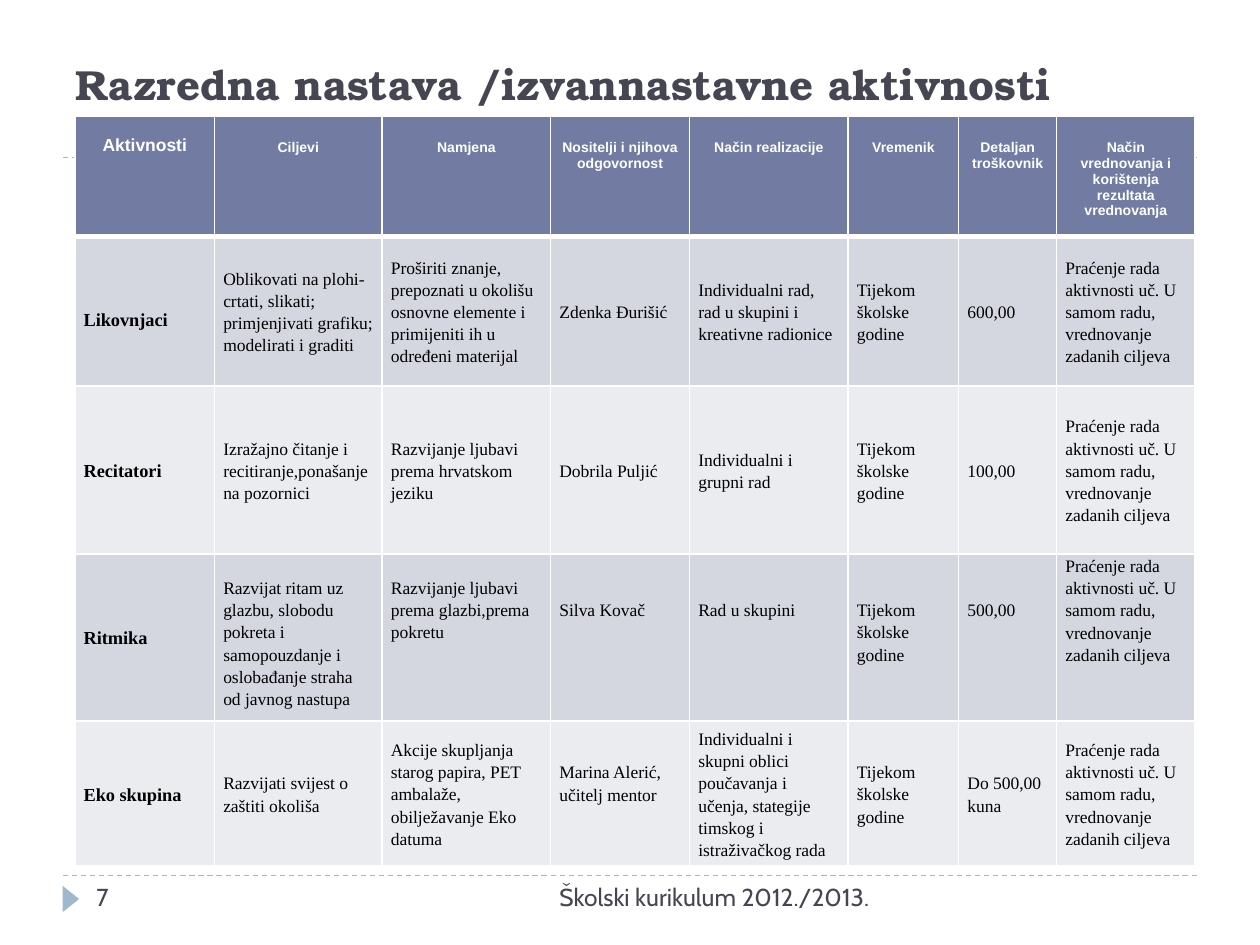
from dataclasses import dataclass

from lxml.etree import SubElement
from pptx import Presentation
from pptx.dml.color import RGBColor
from pptx.enum.dml import MSO_LINE
from pptx.enum.shapes import MSO_CONNECTOR, MSO_SHAPE
from pptx.enum.text import MSO_ANCHOR, MSO_AUTO_SIZE, PP_ALIGN
from pptx.oxml.ns import qn
from pptx.util import Pt


@dataclass(frozen=True)
class TextStyle:
    font: str
    size: float
    color: str
    bold: bool = False
    align: PP_ALIGN = PP_ALIGN.LEFT
    spacing: float = 1.0


@dataclass(frozen=True)
class Theme:
    accent: str = "9FB8CD"
    header_fill: str = "727CA3"
    bands: tuple = ("D5D7E0", "EBECF0")
    border: str = "FFFFFF"
    title: TextStyle = TextStyle("TeX Gyre Bonum", 24, "464653", True)
    page: TextStyle = TextStyle("Cabin", 14, "464653")
    footer: TextStyle = TextStyle("Cabin", 14, "464653", align=PP_ALIGN.RIGHT)
    first_header: TextStyle = TextStyle("Arial", 10, "FFFFFF", True, PP_ALIGN.CENTER)
    header: TextStyle = TextStyle("Arial", 8, "FFFFFF", True, PP_ALIGN.CENTER)
    label: TextStyle = TextStyle("Times New Roman", 10.5, "000000", True, spacing=1.15)
    body: TextStyle = TextStyle("Times New Roman", 10, "000000", spacing=1.15)


@dataclass(frozen=True)
class Entry:
    text: str
    anchor: MSO_ANCHOR = MSO_ANCHOR.MIDDLE
    top: float = 0
    bottom: float = 0


@dataclass(frozen=True)
class Box:
    left: float
    top: float
    width: float
    height: float

    def lengths(self) -> tuple:
        return Pt(self.left), Pt(self.top), Pt(self.width), Pt(self.height)


THEME = Theme()
LINE = 12.6
COLUMN_WIDTHS = (79.8, 95.8, 96.3, 79.4, 90.6, 63.2, 56, 79.1)
ROW_HEIGHTS = (68.8, 85.5, 96.2, 89, 75.5)
EVALUATION = "Praćenje rada aktivnosti uč. U samom radu, vrednovanje zadanih ciljeva"
PERIOD = "Tijekom školske godine"


def from_top(text: str, offset: float = 0) -> Entry:
    return Entry(text, MSO_ANCHOR.TOP, offset)


HEADERS = (
    from_top("Aktivnosti", 11.5),
    *(from_top(text, 13.8) for text in (
        "Ciljevi", "Namjena", "Nositelji i njihova odgovornost", "Način realizacije",
        "Vremenik", "Detaljan troškovnik",
        "Način vrednovanja i korištenja rezultata vrednovanja",
    )),
)
ACTIVITIES = (
    (
        from_top("Likovnjaci", 40.5),
        Entry("Oblikovati na plohi-crtati, slikati; primjenjivati grafiku; modelirati i graditi"),
        Entry("Proširiti znanje, prepoznati u okolišu osnovne elemente i primijeniti ih "
              "u određeni materijal"),
        Entry("Zdenka Đurišić"),
        Entry("Individualni rad, rad u skupini i kreativne radionice"),
        Entry(PERIOD), Entry("600,00"), Entry(EVALUATION),
    ),
    (
        Entry("Recitatori"),
        Entry("Izražajno čitanje i recitiranje,ponašanje na pozornici"),
        Entry("Razvijanje ljubavi prema hrvatskom jeziku"),
        Entry("Dobrila Puljić"),
        Entry("Individualni i grupni rad"),
        Entry(PERIOD), Entry("100,00"), Entry(EVALUATION),
    ),
    (
        from_top("Ritmika", 40.5),
        from_top("Razvijat ritam uz glazbu, slobodu pokreta i samopouzdanje i "
                 "oslobađanje straha od javnog nastupa", LINE),
        from_top("Razvijanje ljubavi prema glazbi,prema pokretu", LINE),
        from_top("Silva Kovač", 2 * LINE),
        from_top("Rad u skupini", 2 * LINE),
        from_top(PERIOD, 2 * LINE), from_top("500,00", 2 * LINE), from_top(EVALUATION),
    ),
    (
        Entry("Eko skupina"),
        Entry("Razvijati svijest o zaštiti okoliša"),
        Entry("Akcije skupljanja starog papira, PET ambalaže, obilježavanje Eko datuma"),
        Entry("Marina Alerić,\nučitelj mentor", bottom=LINE),
        Entry("Individualni i skupni oblici poučavanja i učenja, stategije timskog i "
              "istraživačkog rada"),
        Entry(PERIOD), Entry("Do 500,00 kuna"), Entry(EVALUATION),
    ),
)


def write(frame, text: str, style: TextStyle) -> None:
    frame.word_wrap = True
    for index, line in enumerate(text.split("\n")):
        paragraph = frame.add_paragraph() if index else frame.paragraphs[0]
        paragraph.alignment = style.align
        paragraph.line_spacing = style.spacing
        run = paragraph.add_run()
        run.text = line
        run.font.name = style.font
        run.font.size = Pt(style.size)
        run.font.bold = style.bold
        run.font.color.rgb = RGBColor.from_string(style.color)


def add_divider(slide, y: float) -> None:
    divider = slide.shapes.add_connector(
        MSO_CONNECTOR.STRAIGHT, Pt(36), Pt(y), Pt(684), Pt(y))
    divider.line.color.rgb = RGBColor.from_string(THEME.accent)
    divider.line.width = Pt(0.75)
    divider.line.dash_style = MSO_LINE.DASH
    SubElement(divider._element.spPr, qn("a:effectLst"))


def add_page_marker(slide, box: Box) -> None:
    marker = slide.shapes.add_shape(MSO_SHAPE.ISOSCELES_TRIANGLE, *box.lengths())
    marker.rotation = 90
    marker.shadow.inherit = False
    marker.fill.solid()
    marker.fill.fore_color.rgb = RGBColor.from_string(THEME.accent)
    marker.line.fill.background()


def add_text(slide, box: Box, text: str, style: TextStyle) -> None:
    write(slide.shapes.add_textbox(*box.lengths()).text_frame, text, style)


def set_title(slide, box: Box, text: str) -> None:
    title = slide.shapes.title
    title.left, title.top, title.width, title.height = box.lengths()
    title.text_frame.auto_size = MSO_AUTO_SIZE.NONE
    title.text_frame.vertical_anchor = MSO_ANCHOR.BOTTOM
    write(title.text_frame, text, THEME.title)


def set_borders(cell, top: float, bottom: float) -> None:
    properties = cell._tc.get_or_add_tcPr()
    for side, width in (("L", 1), ("R", 1), ("T", top), ("B", bottom)):
        edge = SubElement(properties, qn(f"a:ln{side}"), w=str(Pt(width)))
        fill = SubElement(edge, qn("a:solidFill"))
        SubElement(fill, qn("a:srgbClr"), val=THEME.border)


def fill_cell(cell, entry: Entry, row: int, column: int) -> None:
    if row == 0:
        style = THEME.header if column else THEME.first_header
        color = THEME.header_fill
    else:
        style = THEME.body if column else THEME.label
        color = THEME.bands[(row - 1) % 2]
    set_borders(cell, 3 if row == 1 else 1, 3 if row == 0 else 1)
    cell.fill.solid()
    cell.fill.fore_color.rgb = RGBColor.from_string(color)
    cell.margin_left = cell.margin_right = Pt(5)
    cell.margin_top, cell.margin_bottom = Pt(entry.top), Pt(entry.bottom)
    cell.vertical_anchor = entry.anchor
    write(cell.text_frame, entry.text, style)


def add_activity_table(slide, left: float, top: float) -> None:
    box = Box(left, top, sum(COLUMN_WIDTHS), sum(ROW_HEIGHTS))
    table = slide.shapes.add_table(
        len(ROW_HEIGHTS), len(COLUMN_WIDTHS), *box.lengths()).table
    table.first_row = table.horz_banding = False
    for column, width in zip(table.columns, COLUMN_WIDTHS):
        column.width = Pt(width)
    for row, height in zip(table.rows, ROW_HEIGHTS):
        row.height = Pt(height)
    for row, entries in enumerate((HEADERS, *ACTIVITIES)):
        for column, entry in enumerate(entries):
            fill_cell(table.cell(row, column), entry, row, column)


def main() -> None:
    deck = Presentation()
    deck.slide_width, deck.slide_height = Pt(720), Pt(540)
    slide = deck.slides.add_slide(deck.slide_layouts[5])
    for y in (500.4, 90):
        add_divider(slide, y)
    add_page_marker(slide, Box(33, 509, 15, 9.4))
    set_title(slide, Box(36, 21.6, 664, 44), "Razredna nastava /izvannastavne aktivnosti")
    add_text(slide, Box(228, 500.4, 276, 28.8), "Školski kurikulum 2012./2013.", THEME.footer)
    add_text(slide, Box(48, 500.4, 156, 28.8), "7", THEME.page)
    add_activity_table(slide, 42.8, 66.2)
    deck.save("out.pptx")


if __name__ == "__main__":
    main()
